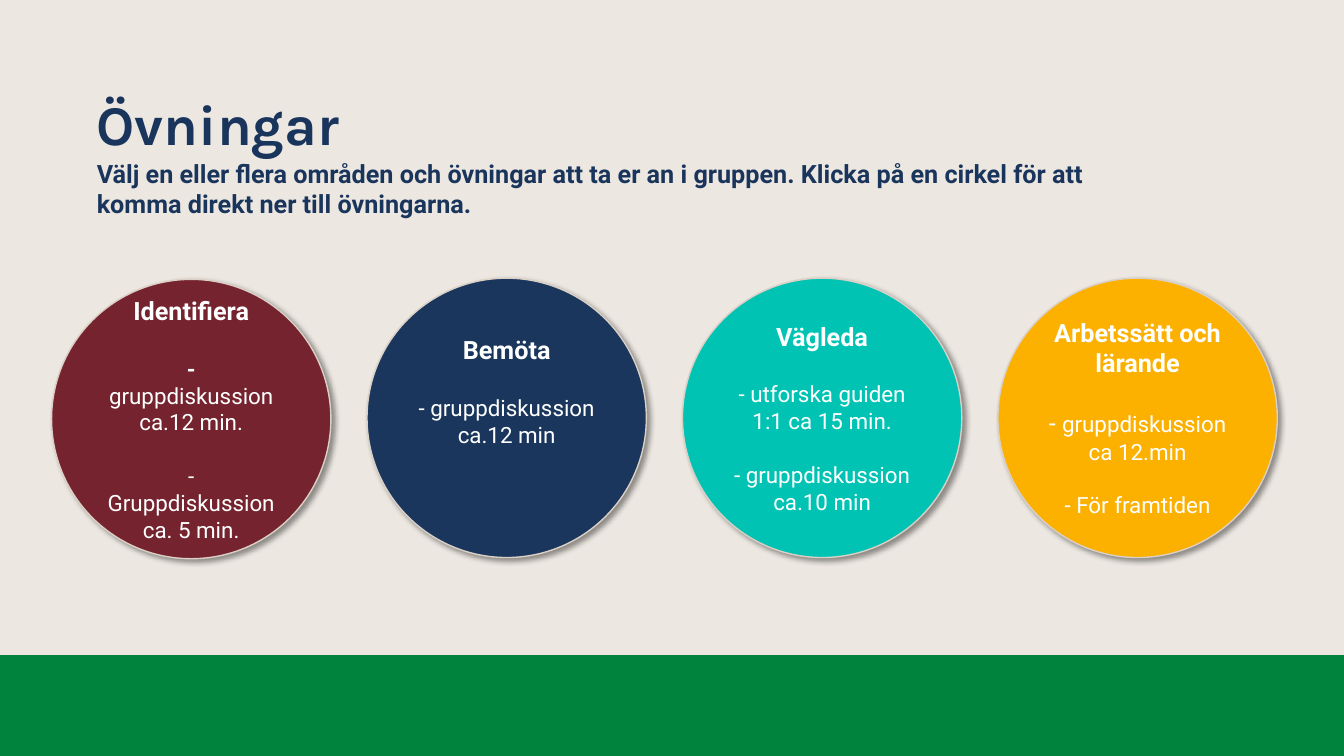
from lxml import etree
from pptx import Presentation
from pptx.dml import color as dml
from pptx.enum import shapes, text
from pptx.oxml import ns
from pptx.util import Cm, Pt

COLORS = {
    "sand": "ECE7E1", "green": "00833D", "navy": "1A355C", "white": "FEFFFF",
    "edge": "DAD0C5", "wine": "75232E", "blue": "1B365D", "teal": "00C3B4",
    "gold": "FCB000", "black": "000000",
}
SIZE, STEP, LEFT = 7.04, 7.95, 1.3
LEAD = "Välj en eller flera områden och övningar att ta er an i gruppen. Klicka på en cirkel för att komma direkt ner till övningarna."
TOPICS = [
    ("wine", 7.04, 0.13, "Identifiera",
     [[("- ", 16, True), ("gruppdiskussion ca.12 min.", 16, False)],
      [("- Gruppdiskussion ca. 5 min.", 16, False)]]),
    ("blue", 7.01, 1.47, "Bemöta",
     [[("- gruppdiskussion ca.12 min", 16, False)]]),
    ("teal", 7.01, 0.13, "Vägleda",
     [[("- utforska guiden 1:1 ca 15 min.", 16, False)],
      [("- gruppdiskussion ca.10 min", 16, False)]]),
    ("gold", 7.01, 0.13, "Arbetssätt och lärande",
     [[("- ", 18, False), ("gruppdiskussion ca 12.min", 16, False)],
      [("- För framtiden", 16, False)]]),
]


def rgb(name):
    return dml.RGBColor.from_string(COLORS[name])


def style(font, face, size, tone, bold=True):
    font.name = face
    font.size = Pt(size)
    font.bold = bold
    font.color.rgb = rgb(tone)


def add_label(slide, box, words, face, size, anchor, right=0):
    frame = slide.shapes.add_textbox(*map(Cm, box)).text_frame
    frame.word_wrap = True
    frame.vertical_anchor = anchor
    frame.margin_left = frame.margin_top = frame.margin_bottom = 0
    frame.margin_right = Cm(right)
    frame.text = words
    para = frame.paragraphs[0]
    style(para.runs[0].font, face, size, "navy")
    return para


def add_shape(slide, kind, box, fill):
    shape = slide.shapes.add_shape(kind, *map(Cm, box))
    shape.shadow.inherit = False
    shape.fill.solid()
    shape.fill.fore_color.rgb = rgb(fill)
    shape.line.fill.background()
    return shape


def add_shadow(shape):
    effects = shape.element.spPr.find(ns.qn("a:effectLst"))
    outer = etree.SubElement(
        effects, ns.qn("a:outerShdw"), blurRad=str(Pt(4)), dist=str(Pt(3)),
        dir="2700000", algn="tl", rotWithShape="0")
    tint = etree.SubElement(outer, ns.qn("a:srgbClr"), val=COLORS["black"])
    etree.SubElement(tint, ns.qn("a:alpha"), val="40000")


def add_circle(slide, left, top, fill, base, title, items):
    circle = add_shape(slide, shapes.MSO_SHAPE.OVAL, (left, top, SIZE, SIZE), fill)
    circle.line.color.rgb = rgb("edge")
    circle.line.width = Pt(1)
    add_shadow(circle)
    frame = circle.text_frame
    frame.word_wrap = True
    frame.vertical_anchor = text.MSO_ANCHOR.MIDDLE
    frame.margin_bottom = Cm(base)
    for i, parts in enumerate([[(title, 18, True)]] + items):
        para = frame.add_paragraph() if i else frame.paragraphs[0]
        para.alignment = text.PP_ALIGN.CENTER
        if i:
            para.space_before = Pt(21 if i == 1 else 19)
        for words, size, bold in parts:
            run = para.add_run()
            run.text = words
            style(run.font, "Roboto", size, "white", bold)


def main():
    deck = Presentation()
    deck.slide_width, deck.slide_height = Cm(33.87), Cm(19.05)
    slide = deck.slides.add_slide(deck.slide_layouts[6])
    slide.background.fill.solid()
    slide.background.fill.fore_color.rgb = rgb("sand")
    add_shape(slide, shapes.MSO_SHAPE.RECTANGLE, (0, 16.51, 33.87, 2.54), "green")
    add_label(slide, (2.44, 3.99, 26.59, 2.34), LEAD, "Roboto", 18,
              text.MSO_ANCHOR.TOP, 0.79).space_before = Pt(0)
    head = add_label(slide, (2.44, 2.41, 29.06, 1.55), "Övningar", "Karla", 40,
                     text.MSO_ANCHOR.BOTTOM)
    head.line_spacing = 0.9
    for i, (fill, top, base, title, items) in enumerate(TOPICS):
        add_circle(slide, LEFT + i * STEP, top, fill, base, title, items)
    deck.save("out.pptx")


if __name__ == "__main__":
    main()
